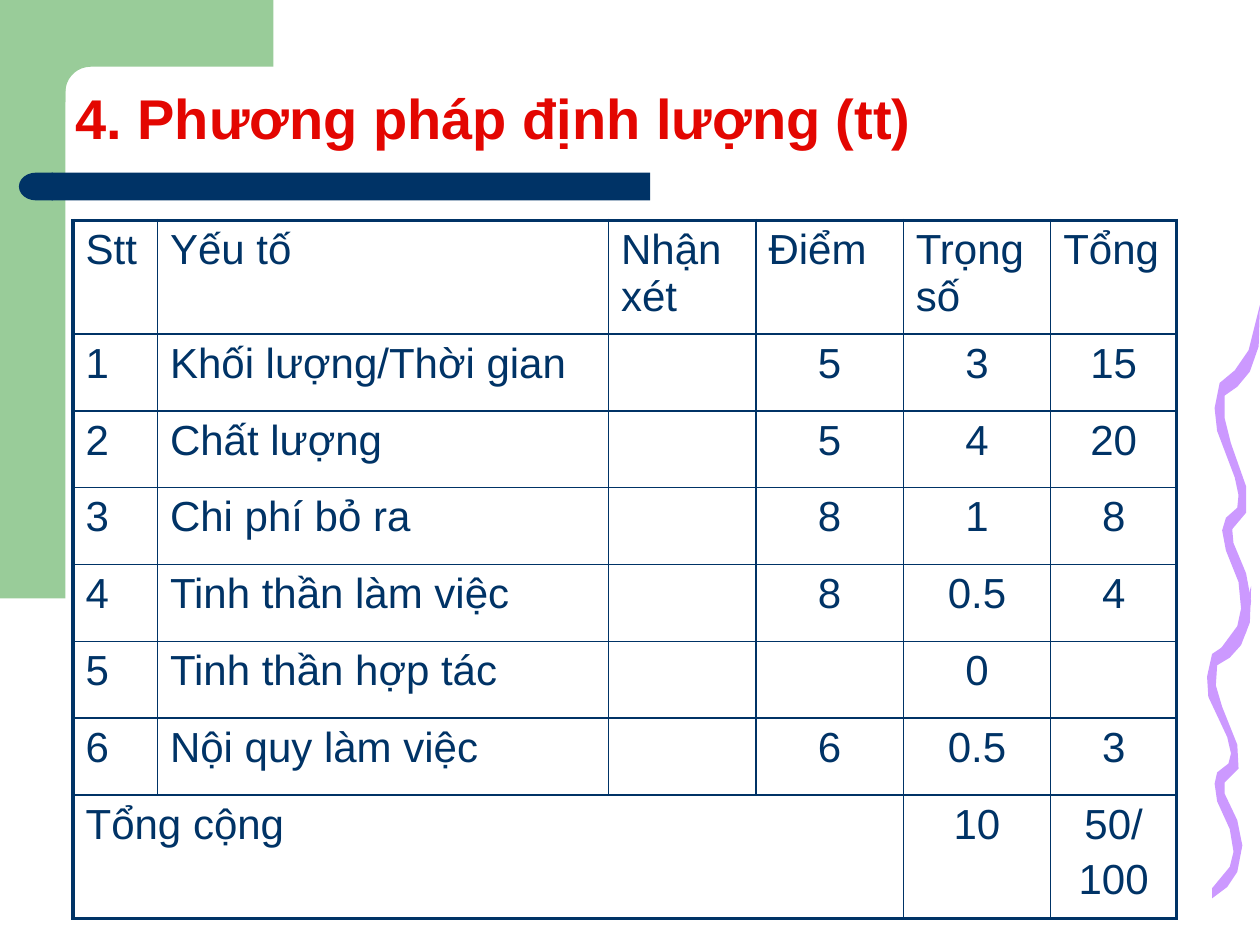
from dataclasses import dataclass
from math import cos, radians, sin

from lxml import etree
from pptx import Presentation
from pptx import util as u
from pptx.dml.color import RGBColor
from pptx.enum import shapes, text
from pptx.oxml import ns

COLORS = {"green": "99CC99", "navy": "003366", "violet": "CC99FF", "red": "E30601"}
FONT = "Arial"
THIN, THICK = 1, 2.25
Point = tuple[float, float]


@dataclass
class Block:
    preset: shapes.MSO_SHAPE
    left: float
    top: float
    width: float
    height: float
    color: str
    rotation: float = 0


@dataclass
class Outline:
    points: list[Point]
    color: str


BLOCKS = [
    Block(shapes.MSO_SHAPE.RECTANGLE, 0, 0, 0.52, 4.75, "green"),
    Block(shapes.MSO_SHAPE.RECTANGLE, 0.41, 1.37, 4.75, 0.22, "navy"),
    Block(shapes.MSO_SHAPE.FLOWCHART_DELAY, 0.15, 1.37, 0.27, 0.22, "navy", 180),
]
INNER_CURVE = [
    (0.72 - 0.2 * sin(radians(angle)), 0.73 - 0.2 * cos(radians(angle)))
    for angle in range(0, 91, 10)
]
OUTLINES = [
    Outline([(2.17, 0), (2.17, 0.53), *INNER_CURVE, (0.52, 0.81), (0.31, 0.81), (0.31, 0)], "green"),
    Outline([
        (9.62, 7.05), (9.76, 6.88), (9.79, 6.76), (9.76, 6.58), (9.66, 6.36), (9.64, 6.22),
        (9.66, 6.13), (9.75, 6.06), (9.77, 5.98), (9.74, 5.85), (9.59, 5.53), (9.58, 5.37),
        (9.62, 5.19), (9.74, 5.11), (9.84, 4.97), (9.93, 4.65), (9.92, 4.94), (9.85, 5.12),
        (9.76, 5.22), (9.66, 5.28), (9.65, 5.44), (9.7, 5.61), (9.82, 5.91), (9.83, 6.1),
        (9.72, 6.21), (9.72, 6.3), (9.82, 6.51), (9.86, 6.71), (9.82, 6.92), (9.74, 7.04),
        (9.62, 7.13),
    ], "violet"),
    Outline([
        (9.68, 5.16), (9.82, 4.97), (9.85, 4.83), (9.83, 4.62), (9.73, 4.37), (9.7, 4.21),
        (9.73, 4.11), (9.82, 4.03), (9.83, 3.93), (9.8, 3.79), (9.66, 3.42), (9.64, 3.24),
        (9.68, 3.04), (9.8, 2.94), (9.91, 2.78), (10, 2.42), (9.99, 2.75), (9.92, 2.95),
        (9.82, 3.07), (9.72, 3.14), (9.72, 3.32), (9.77, 3.52), (9.89, 3.86), (9.89, 4.07),
        (9.78, 4.2), (9.79, 4.31), (9.89, 4.55), (9.93, 4.77), (9.89, 5.02), (9.8, 5.15),
        (9.69, 5.25),
    ], "violet"),
]

COLUMN_WIDTHS = [0.67, 3.58, 1.17, 1.17, 1.17, 1]
ROW_HEIGHTS = [0.9] + [0.61] * 6 + [0.98]
SCORES = [
    ["Stt", "Yếu tố", "Nhận xét", "Điểm", "Trọng số", "Tổng"],
    ["1", "Khối lượng/Thời gian", "", "5", "3", "15"],
    ["2", "Chất lượng", "", "5", "4", "20"],
    ["3", "Chi phí bỏ ra", "", "8", "1", "8"],
    ["4", "Tinh thần làm việc", "", "8", "0.5", "4"],
    ["5", "Tinh thần hợp tác", "", "", "0", ""],
    ["6", "Nội quy làm việc", "", "6", "0.5", "3"],
    ["Tổng cộng", "", "", "", "10", "50/\n100"],
]
LAST_ROW, LAST_COLUMN = len(SCORES) - 1, len(COLUMN_WIDTHS) - 1


def rgb(name: str) -> RGBColor:
    return RGBColor.from_string(COLORS[name])


def paint(shape, color: str) -> None:
    shape.shadow.inherit = False
    shape.fill.solid()
    shape.fill.fore_color.rgb = rgb(color)
    shape.line.fill.background()


def draw_block(slide, block: Block) -> None:
    edges = (block.left, block.top, block.width, block.height)
    shape = slide.shapes.add_shape(block.preset, *map(u.Inches, edges))
    shape.rotation = block.rotation
    paint(shape, block.color)


def draw_outline(slide, outline: Outline) -> None:
    first, *rest = [(u.Inches(x), u.Inches(y)) for x, y in outline.points]
    builder = slide.shapes.build_freeform(*first)
    builder.add_line_segments(rest, close=True)
    paint(builder.convert_to_shape(), outline.color)


def format_runs(paragraph, size: float, color: str, bold: bool = False) -> None:
    for run in paragraph.runs:
        run.font.name = FONT
        run.font.size = u.Pt(size)
        run.font.bold = bold
        run.font.color.rgb = rgb(color)


def draw_title(slide, wording: str) -> None:
    title = slide.shapes.add_textbox(u.Inches(0.5), u.Inches(0.58), u.Inches(8.67), u.Inches(0.67))
    frame = title.text_frame
    frame.text = wording
    frame.word_wrap = True
    frame.vertical_anchor = text.MSO_ANCHOR.BOTTOM
    frame.paragraphs[0].line_spacing = 0.9
    format_runs(frame.paragraphs[0], 32, "red", bold=True)


def set_borders(cell, row: int, column: int) -> None:
    outer_sides = {
        "L": column == 0,
        "R": column == LAST_COLUMN or cell.is_merge_origin and column + cell.span_width > LAST_COLUMN,
        "T": row == 0,
        "B": row == LAST_ROW,
    }
    properties = cell._tc.get_or_add_tcPr()
    for index, (side, outer) in enumerate(outer_sides.items()):
        line = etree.Element(ns.qn(f"a:ln{side}"), w=str(u.Pt(THICK if outer else THIN)))
        fill = etree.SubElement(line, ns.qn("a:solidFill"))
        etree.SubElement(fill, ns.qn("a:srgbClr"), val=COLORS["navy"])
        properties.insert(index, line)


def fill_cell(cell, wording: str, row: int, column: int) -> None:
    cell.fill.background()
    set_borders(cell, row, column)
    cell.text_frame.text = wording
    for index, paragraph in enumerate(cell.text_frame.paragraphs):
        if row > 0 and column > 1:
            paragraph.alignment = text.PP_ALIGN.CENTER
        if index > 0:
            paragraph.space_before = u.Pt(4.8)
        format_runs(paragraph, 24, "navy")


def draw_scores(slide) -> None:
    scores = slide.shapes.add_table(
        len(SCORES), len(COLUMN_WIDTHS), u.Inches(0.58), u.Inches(1.75),
        u.Inches(sum(COLUMN_WIDTHS)), u.Inches(sum(ROW_HEIGHTS)),
    ).table
    scores.first_row = scores.horz_banding = False
    for column, width in zip(scores.columns, COLUMN_WIDTHS):
        column.width = u.Inches(width)
    for row, height in zip(scores.rows, ROW_HEIGHTS):
        row.height = u.Inches(height)
    scores.cell(LAST_ROW, 0).merge(scores.cell(LAST_ROW, 3))
    for row, wordings in enumerate(SCORES):
        for column, wording in enumerate(wordings):
            fill_cell(scores.cell(row, column), wording, row, column)


def main() -> None:
    deck = Presentation()
    deck.slide_width, deck.slide_height = u.Inches(10), u.Inches(7.5)
    slide = deck.slides.add_slide(deck.slide_layouts[6])
    for block in BLOCKS:
        draw_block(slide, block)
    for outline in OUTLINES:
        draw_outline(slide, outline)
    draw_title(slide, "4. Phương pháp định lượng (tt)")
    draw_scores(slide)
    deck.save("out.pptx")


if __name__ == "__main__":
    main()
